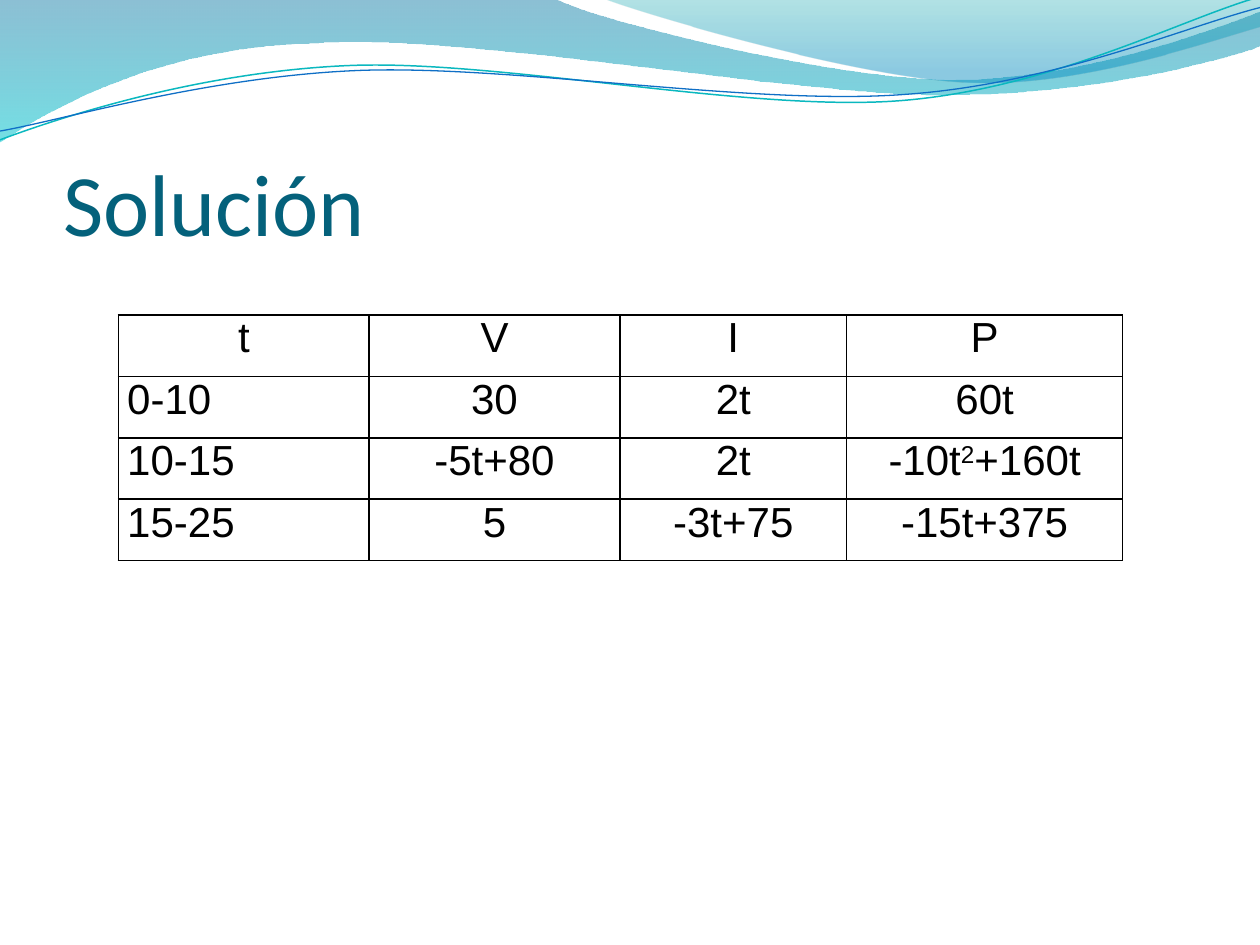
import math

import pptx
import pptx.util
import pptx.dml.color
import pptx.enum.text
import pptx.oxml
import pptx.oxml.ns

Inches, Pt = pptx.util.Inches, pptx.util.Pt
RGB = pptx.dml.color.RGBColor.from_string
ALIGN = pptx.enum.text.PP_ALIGN
ANCHOR = pptx.enum.text.MSO_ANCHOR
qn = pptx.oxml.ns.qn
NS = pptx.oxml.ns.nsdecls("a")

THEME = {
    "title_font": "Calibri", "title_size": 50, "title_color": "04617B",
    "table_font": "Arial", "table_size": 24, "table_color": "000000",
    "border": 1,
}

TITLE = "Solución"
ROWS = [
    ["t", "V", "I", "P"],
    ["0-10", "30", "2t", "60t"],
    ["10-15", "-5t+80", "2t", "-10t^2^+160t"],
    ["15-25", "5", "-3t+75", "-15t+375"],
]
COL_WIDTHS = [1.99, 1.99, 1.8, 2.19]
TABLE_HEIGHT = 1.95

LINE_TILT = 2.7
LINE_CENTER = (4.99, 0.58)

BANDS = [
    {"start": (0, 0),
     "segments": [[(4.4, -0.01)],
                  [(4.76, 0.17), (6.64, 0.63), (7.58, 0.63)],
                  [(8.53, 0.63), (9.58, 0.26), (10, 0.09)],
                  [(10.01, 0.36)],
                  [(9.83, 0.44), (8.7, 0.76), (7.46, 0.75)],
                  [(6.22, 0.75), (3.82, 0.28), (2.57, 0.34)],
                  [(1.29, 0.36), (0.46, 0.83), (-0.01, 1.13)],
                  [(0, 0)]],
     "stops": [(0, "0074A1", 45), (1, "00C6CF", 55)]},
    {"start": (4.79, -0.01),
     "segments": [[(5.09, 0.11), (6.82, 0.62), (7.69, 0.65)],
                  [(8.56, 0.69), (9.61, 0.32), (10, 0.21)],
                  [(10, 0)],
                  [(4.79, -0.01)]],
     "stops": [(0, "00A1A9", 30), (0.8, "008BBF", 45)]},
]
LINES = [
    {"start": (0, 1.11),
     "segments": [[(0.48, 0.93), (1.58, 0.57), (2.77, 0.52)],
                  [(3.95, 0.47), (5.93, 0.89), (7.13, 0.8)],
                  [(8.33, 0.71), (9.38, 0.15), (9.98, -0.02)]],
     "color": "0AB8BF", "width": 0.85},
    {"start": (0, 1.04),
     "segments": [[(0.47, 0.96), (1.64, 0.61), (2.83, 0.56)],
                  [(4.03, 0.51), (5.97, 0.84), (7.17, 0.75)],
                  [(8.36, 0.67), (9.41, 0.21), (10, 0.06)]],
     "color": "0F6FC6", "width": 0.75},
]


def level(point):
    a = math.radians(LINE_TILT)
    cx, cy = LINE_CENTER
    x, y = point[0] - cx, point[1] - cy
    return (cx + x * math.cos(a) - y * math.sin(a),
            cy + x * math.sin(a) + y * math.cos(a))


def add_curve(slide, start, segments, close):
    points = [(Inches(x), Inches(y)) for x, y in [start] + sum(segments, [])]
    builder = slide.shapes.build_freeform(*points[0], scale=1.0)
    builder.add_line_segments(points[1:], close=close)
    sp = builder.convert_to_shape()
    sp.shadow.inherit = False
    steps = iter(list(sp._element.spPr.iter(qn("a:lnTo"))))
    for segment in segments:
        group = [next(steps) for _ in segment]
        if len(group) == 3:
            curve = pptx.oxml.parse_xml(f"<a:cubicBezTo {NS}/>")
            group[0].addprevious(curve)
            for step in group:
                curve.append(step[0])
                step.getparent().remove(step)
    return sp


def add_band(slide, band):
    sp = add_curve(slide, band["start"], band["segments"], True)
    sp.line.fill.background()
    sp.fill.gradient()
    sp.fill.gradient_angle = 270
    for stop, (position, color, _) in zip(sp.fill.gradient_stops, band["stops"]):
        stop.position = position
        stop.color.rgb = RGB(color)
    colors = list(sp._element.spPr.iter(qn("a:srgbClr")))
    for clr, (_, _, opacity) in zip(colors, band["stops"]):
        clr.append(pptx.oxml.parse_xml(f'<a:alpha {NS} val="{opacity * 1000}"/>'))


def add_line(slide, line):
    segments = [[level(point) for point in segment] for segment in line["segments"]]
    sp = add_curve(slide, level(line["start"]), segments, False)
    sp.rotation = 360 - LINE_TILT
    sp.fill.background()
    sp.line.color.rgb = RGB(line["color"])
    sp.line.width = Pt(line["width"])


def add_run(p, text, role):
    r = p.add_run()
    r.text = text
    r.font.name = THEME[role + "_font"]
    r.font.size = Pt(THEME[role + "_size"])
    r.font.color.rgb = RGB(THEME[role + "_color"])
    return r


def add_title(slide):
    sp = slide.shapes.title
    sp.left, sp.top, sp.width, sp.height = map(Inches, (0.5, 0.77, 9.08, 1.25))
    tf = sp.text_frame
    tf.vertical_anchor = ANCHOR.BOTTOM
    tf.margin_left = tf.margin_right = tf.margin_bottom = 0
    tf.margin_top = Inches(0.05)
    p = tf.paragraphs[0]
    p.alignment = ALIGN.LEFT
    add_run(p, TITLE, "title")


def add_borders(cell):
    tcPr = cell._tc.get_or_add_tcPr()
    for i, side in enumerate(("lnL", "lnR", "lnT", "lnB")):
        tcPr.insert(i, pptx.oxml.parse_xml(
            f'<a:{side} {NS} w="{Pt(THEME["border"])}">'
            f'<a:solidFill><a:srgbClr val="{THEME["table_color"]}"/></a:solidFill>'
            f'</a:{side}>'))


def add_table(slide):
    table = slide.shapes.add_table(
        len(ROWS), len(COL_WIDTHS), Inches(0.94), Inches(2.5),
        Inches(sum(COL_WIDTHS)), Inches(TABLE_HEIGHT)).table
    table.first_row = table.horz_banding = False
    for column, width in zip(table.columns, COL_WIDTHS):
        column.width = Inches(width)
    for i, row in enumerate(ROWS):
        table.rows[i].height = Inches(TABLE_HEIGHT / len(ROWS))
        for j, text in enumerate(row):
            cell = table.cell(i, j)
            cell.fill.background()
            cell.margin_left = cell.margin_right = Inches(0.07)
            cell.margin_top = cell.margin_bottom = 0
            p = cell.text_frame.paragraphs[0]
            p.alignment = ALIGN.JUSTIFY if i and j == 0 else ALIGN.CENTER
            for k, part in enumerate(text.split("^")):
                r = add_run(p, part, "table")
                if k % 2:
                    r._r.get_or_add_rPr().set("baseline", "30000")
            add_borders(cell)


def main():
    prs = pptx.Presentation()
    prs.slide_width, prs.slide_height = Inches(10), Inches(7.5)
    slide = prs.slides.add_slide(prs.slide_layouts[5])
    for band in BANDS:
        add_band(slide, band)
    for line in LINES:
        add_line(slide, line)
    add_title(slide)
    add_table(slide)
    prs.save("out.pptx")


if __name__ == "__main__":
    main()
